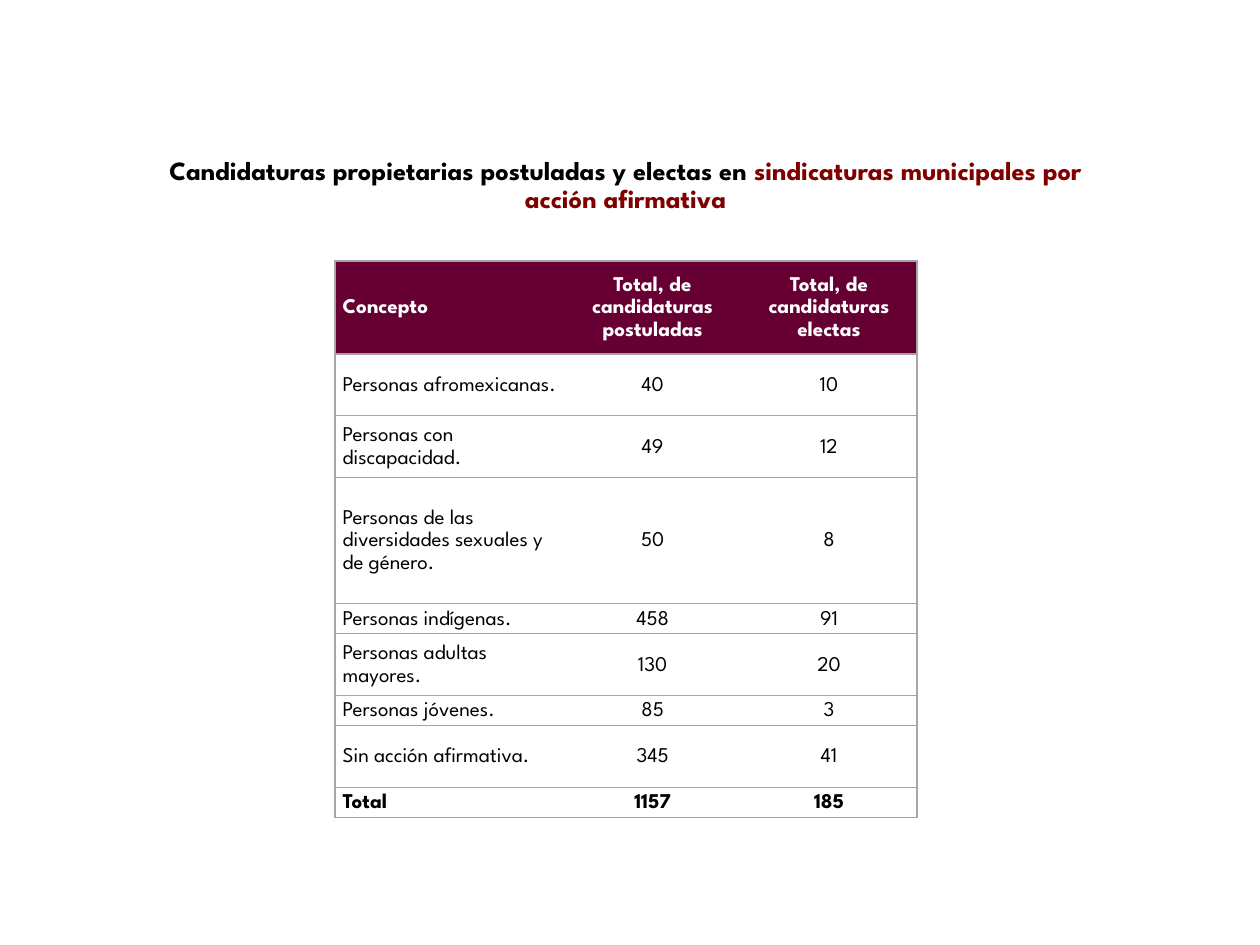
from lxml import etree
from pptx import Presentation
from pptx.dml.color import RGBColor
from pptx.enum.text import MSO_ANCHOR as ANCHOR, PP_ALIGN as ALIGN
from pptx.oxml.ns import qn
from pptx.util import Inches, Pt

FONT = "League Spartan"
BLACK, WHITE, RED = "000000", "FFFFFF", "800000"
MAROON, GRAY = "660033", "A5A5A5"


def add_run(p, text, size, color, bold):
    r = p.add_run()
    r.text = text
    r.font.name = FONT
    r.font.size = Pt(size)
    r.font.bold = bold
    r.font.color.rgb = RGBColor.from_string(color)


def add_border(cell, side, color=None):
    ln = etree.SubElement(cell._tc.get_or_add_tcPr(), qn(f"a:{side}"), w=str(Pt(1)))
    if color:
        fill = etree.SubElement(ln, qn("a:solidFill"))
        etree.SubElement(fill, qn("a:srgbClr"), val=color)
    else:
        etree.SubElement(ln, qn("a:noFill"))


prs = Presentation()
prs.slide_width, prs.slide_height = Inches(10), Inches(7.5)
s = prs.slides.add_slide(prs.slide_layouts[6])

# Title
sp = s.shapes.add_textbox(Inches(1.04), Inches(1.01), Inches(7.85), Inches(0.69))
tf = sp.text_frame
tf.word_wrap = True
tf.vertical_anchor = ANCHOR.BOTTOM
tf.margin_bottom = 0
p = tf.paragraphs[0]
p.alignment = ALIGN.CENTER
p.line_spacing = 0.9
add_run(p, "Candidaturas propietarias postuladas y electas en ", 15, BLACK, True)
add_run(p, "sindicaturas municipales por acción afirmativa", 15, RED, True)

# Table data: row height in inches, then the three cells
rows = [
    (0.74, "Concepto", "Total, de candidaturas postuladas", "Total, de candidaturas electas"),
    (0.49, "Personas afromexicanas.", "40", "10"),
    (0.49, "Personas con discapacidad.", "49", "12"),
    (1, "Personas de las diversidades sexuales y de género.", "50", "8"),
    (0.24, "Personas indígenas.", "458", "91"),
    (0.49, "Personas adultas mayores.", "130", "20"),
    (0.24, "Personas jóvenes.", "85", "3"),
    (0.49, "Sin acción afirmativa.", "345", "41"),
    (0.24, "Total", "1157", "185"),
]
widths = [1.82, 1.4, 1.4]
last_row, last_col = len(rows) - 1, len(widths) - 1

# Table
table = s.shapes.add_table(len(rows), len(widths), Inches(2.66), Inches(2.07),
                           Inches(sum(widths)), Inches(sum(row[0] for row in rows))).table
table.horz_banding = False
for col, width in zip(table.columns, widths):
    col.width = Inches(width)

for i, (height, *texts) in enumerate(rows):
    table.rows[i].height = Inches(height)
    for j, text in enumerate(texts):
        cell = table.cell(i, j)
        cell.margin_left = cell.margin_right = Inches(0.06)
        cell.margin_top = cell.margin_bottom = 0
        cell.vertical_anchor = ANCHOR.MIDDLE

        # Gray outline and row rules, no lines between columns
        add_border(cell, "lnL", GRAY if j == 0 else None)
        add_border(cell, "lnR", GRAY if j == last_col else None)
        add_border(cell, "lnT", GRAY)
        add_border(cell, "lnB", GRAY)
        cell.fill.solid()
        cell.fill.fore_color.rgb = RGBColor.from_string(MAROON if i == 0 else WHITE)

        # Cell text
        p = cell.text_frame.paragraphs[0]
        p.line_spacing = 1.15
        if j > 0:
            p.alignment = ALIGN.CENTER
        else:
            p.alignment = ALIGN.JUSTIFY if i in (0, last_row) else ALIGN.LEFT
        add_run(p, text, 12, WHITE if i == 0 else BLACK, i in (0, last_row))

prs.save("out.pptx")
